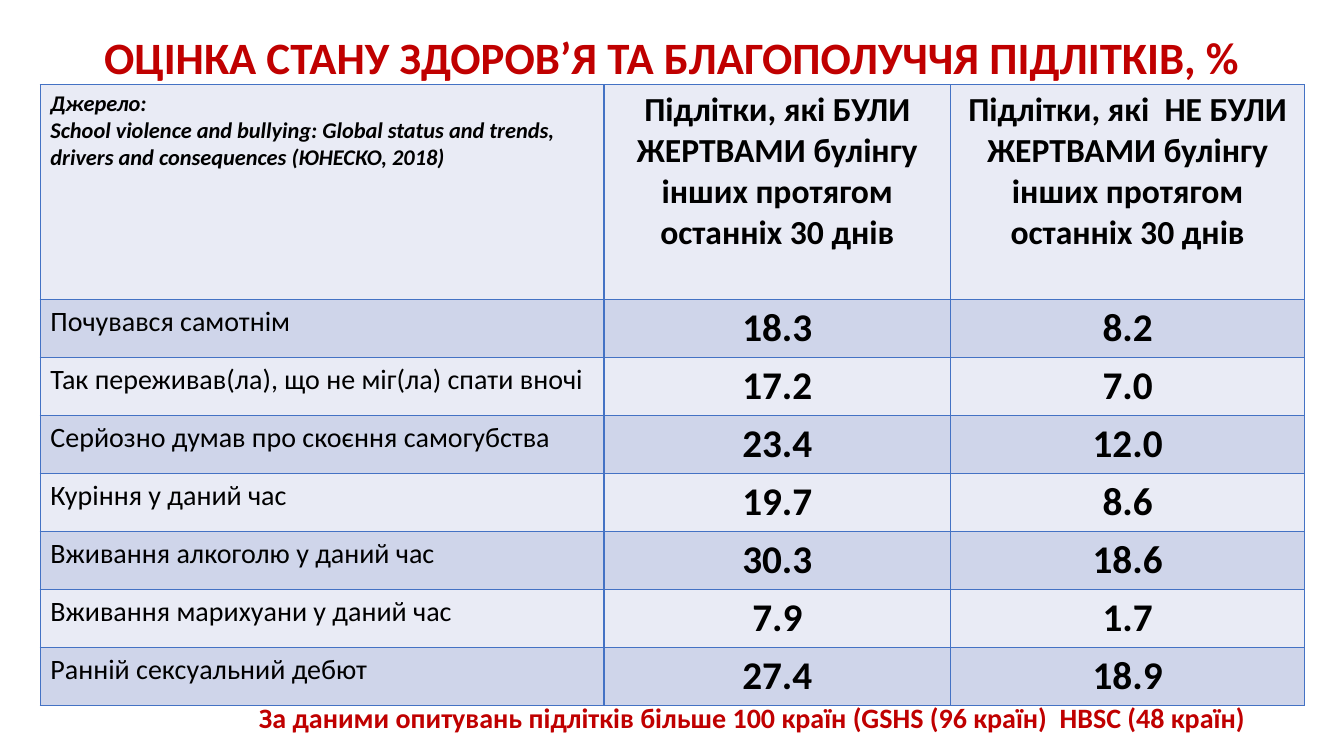
from lxml import etree
from pptx import Presentation
from pptx.dml.color import RGBColor
from pptx.enum import text as t
from pptx.oxml import ns
from pptx.util import Inches, Pt

HEADING = "ОЦІНКА СТАНУ ЗДОРОВ’Я ТА БЛАГОПОЛУЧЧЯ ПІДЛІТКІВ, %"
SURVEYS = "За даними опитувань підлітків більше 100 країн (GSHS (96 країн)  HBSC (48 країн)"
HEADER = (
    "Джерело:\nSchool violence and bullying: Global status and trends, "
    "drivers and consequences (ЮНЕСКО, 2018)",
    "Підлітки, які БУЛИ ЖЕРТВАМИ булінгу інших протягом останніх 30 днів",
    "Підлітки, які  НЕ БУЛИ ЖЕРТВАМИ булінгу інших протягом останніх 30 днів",
)
INDICATORS = [
    ("Почувався самотнім", "18.3", "8.2"),
    ("Так переживав(ла), що не міг(ла) спати вночі", "17.2", "7.0"),
    ("Серйозно думав про скоєння самогубства", "23.4", "12.0"),
    ("Куріння у даний час", "19.7", "8.6"),
    ("Вживання алкоголю у даний час", "30.3", "18.6"),
    ("Вживання марихуани у даний час", "7.9", "1.7"),
    ("Ранній сексуальний дебют", "27.4", "18.9"),
]
COLUMN_WIDTHS = (5.59, 3.44, 3.51)
HEADER_HEIGHT, INDICATOR_HEIGHT = 2.13, 0.57

RED = RGBColor(0xC0, 0x00, 0x00)
BLACK = RGBColor(0x00, 0x00, 0x00)
BANDS = (RGBColor(0xE9, 0xEB, 0xF5), RGBColor(0xCF, 0xD5, 0xEA))
BORDER = RGBColor(0x44, 0x72, 0xC4)


def write(frame, content, size, color, bold=True, italic=False, centred=False):
    frame.text = content
    for paragraph in frame.paragraphs:
        paragraph.alignment = t.PP_ALIGN.CENTER if centred else t.PP_ALIGN.LEFT
        for run in paragraph.runs:
            font = run.font
            font.name, font.size = "Calibri", Pt(size)
            font.bold, font.italic = bold, italic
            font.color.rgb = color


def add_caption(slide, box, content, size, anchor, centred=False):
    caption = slide.shapes.add_textbox(*map(Inches, box)).text_frame
    caption.word_wrap = True
    caption.vertical_anchor = anchor
    write(caption, content, size, RED, centred=centred)
    return caption


def add_borders(cell):
    properties = cell._tc.get_or_add_tcPr()
    for position, side in enumerate(("lnL", "lnR", "lnT", "lnB")):
        line = etree.Element(ns.qn(f"a:{side}"), w=str(Pt(1)))
        fill = etree.SubElement(line, ns.qn("a:solidFill"))
        etree.SubElement(fill, ns.qn("a:srgbClr"), val=str(BORDER))
        properties.insert(position, line)


def add_indicator_table(slide):
    rows = [HEADER, *INDICATORS]
    heights = [HEADER_HEIGHT] + [INDICATOR_HEIGHT] * len(INDICATORS)
    table = slide.shapes.add_table(
        len(rows), len(HEADER), Inches(0.4), Inches(0.84),
        Inches(sum(COLUMN_WIDTHS)), Inches(sum(heights))).table
    table.first_row = table.horz_banding = False
    for column, width in zip(table.columns, COLUMN_WIDTHS):
        column.width = Inches(width)
    for r, (row, height) in enumerate(zip(rows, heights)):
        table.rows[r].height = Inches(height)
        for c, content in enumerate(row):
            cell = table.cell(r, c)
            cell.fill.solid()
            cell.fill.fore_color.rgb = BANDS[r % 2]
            add_borders(cell)
            is_header, is_label = r == 0, c == 0
            label_size, value_size = (16, 24) if is_header else (20, 28)
            write(cell.text_frame, content,
                  label_size if is_label else value_size, BLACK,
                  bold=is_header or not is_label,
                  italic=is_header and is_label, centred=not is_label)


def main():
    deck = Presentation()
    deck.slide_width, deck.slide_height = Inches(13.33), Inches(7.5)
    slide = deck.slides.add_slide(deck.slide_layouts[6])
    add_indicator_table(slide)
    heading = add_caption(slide, (0, 0, 13.33, 1.18), HEADING, 32,
                          t.MSO_ANCHOR.MIDDLE, centred=True)
    heading.paragraphs[0].line_spacing = 0.9
    add_caption(slide, (2.47, 6.9, 10.08, 0.44), SURVEYS, 20, t.MSO_ANCHOR.TOP)
    deck.save("out.pptx")


if __name__ == "__main__":
    main()
